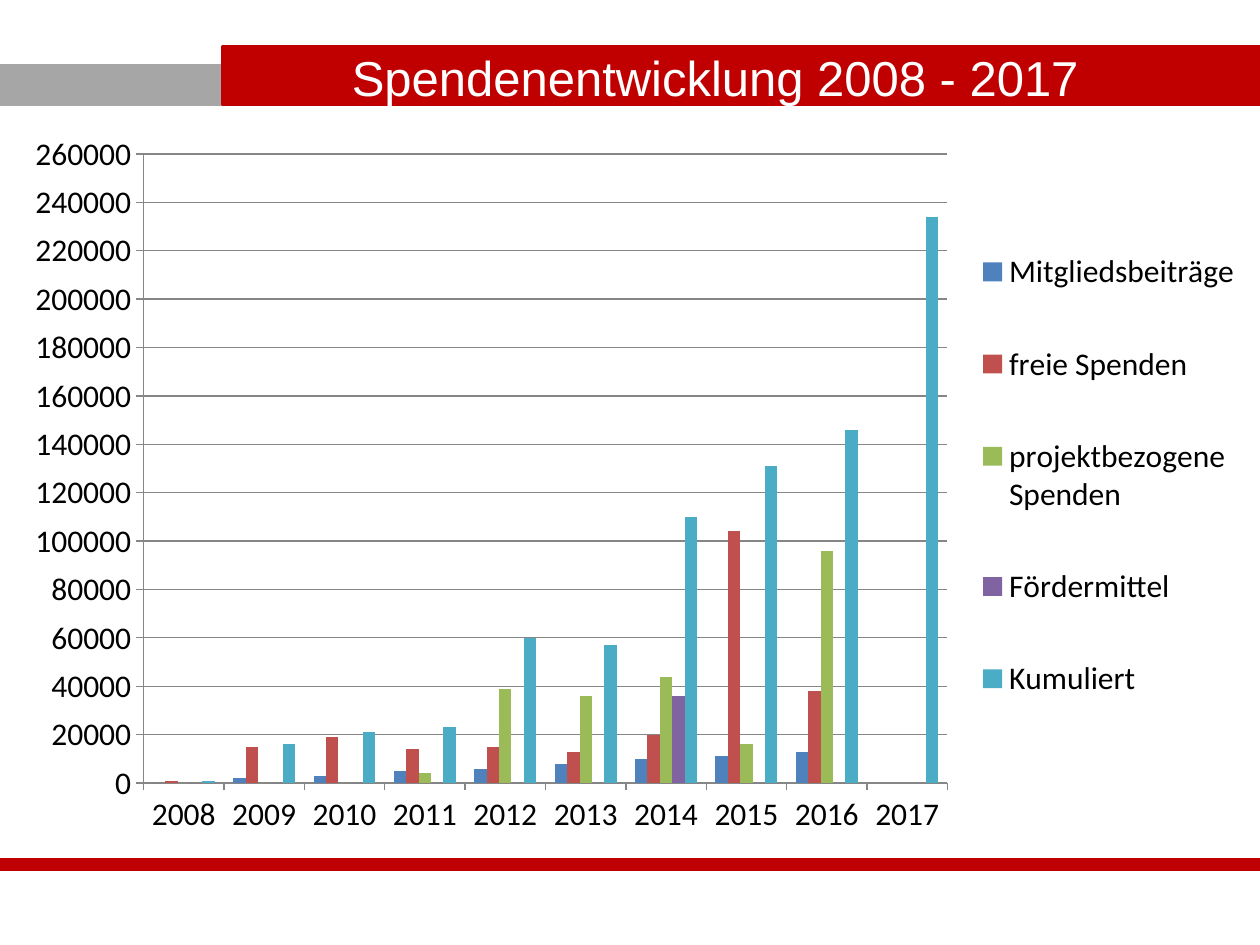
import pptx
import pptx.util
import pptx.chart.data
import pptx.dml.color
import pptx.enum.chart
import pptx.enum.shapes
import pptx.enum.text
import pptx.oxml
from pptx.util import Inches

COLORS = {"grey": "A6A6A6", "red": "C00000", "white": "FFFFFF", "black": "000000", "axis": "868686"}
TITLE = "Spendenentwicklung 2008 - 2017"
BARS = [
    ("grey", 0, 0.52, 1.77, 0.31),
    ("red", 1.77, 0.37, 8.23, 0.46),
    ("red", 0, 6.82, 10, 0.08),
]
YEARS = [str(year) for year in range(2008, 2018)]
SERIES = [
    ("Mitgliedsbeiträge", "4F81BD", [0, 2000, 3000, 5000, 6000, 8000, 10000, 11000, 13000, None]),
    ("freie Spenden", "C0504D", [1000, 15000, 19000, 14000, 15000, 13000, 20000, 104000, 38000, None]),
    ("projektbezogene Spenden", "9BBB59", [0, 0, 0, 4000, 39000, 36000, 44000, 16000, 96000, None]),
    ("Fördermittel", "8064A2", [0, 0, 0, 0, 0, 0, 36000, 0, 0, None]),
    ("Kumuliert", "4BACC6", [1000, 16000, 21000, 23000, 60000, 57000, 110000, 131000, 146000, 234000]),
]
PLOT_AREA = {"x": 0.114, "y": 0.027, "w": 0.638, "h": 0.887}
LEGEND_AREA = {"x": 0.77, "y": 0.09, "w": 0.22, "h": 0.78}


def rgb(value):
    return pptx.dml.color.RGBColor.from_string(value)


def paint(fill, value):
    fill.solid()
    fill.fore_color.rgb = rgb(value)


def style_font(font, name, size, color):
    font.name = name
    font.size = pptx.util.Pt(size)
    font.color.rgb = rgb(COLORS[color])


def add_bars(page):
    for color, *place in BARS:
        bar = page.shapes.add_shape(pptx.enum.shapes.MSO_SHAPE.RECTANGLE, *map(Inches, place))
        bar.shadow.inherit = False
        paint(bar.fill, COLORS[color])
        bar.line.color.rgb = rgb(COLORS[color])
        bar.line.width = pptx.util.Pt(2)


def add_donation_chart(page):
    data = pptx.chart.data.CategoryChartData(number_format="General")
    data.categories = YEARS
    for name, _, values in SERIES:
        data.add_series(name, values)
    chart = page.shapes.add_chart(
        pptx.enum.chart.XL_CHART_TYPE.COLUMN_CLUSTERED,
        Inches(0), Inches(1.07), Inches(10), Inches(5.63), data,
    ).chart
    style_font(chart.font, "Calibri", 18, "black")
    chart.has_title = False
    chart.has_legend = True
    chart.legend.position = pptx.enum.chart.XL_LEGEND_POSITION.RIGHT
    chart.legend.include_in_layout = False

    plot = chart.plots[0]
    plot.gap_width = 150
    plot.overlap = 0
    plot.vary_by_categories = False
    for series, (_, color, _) in zip(plot.series, SERIES):
        paint(series.format.fill, color)
        series.invert_if_negative = False

    values = chart.value_axis
    values.minimum_scale, values.maximum_scale, values.major_unit = 0, 260000, 20000
    values.has_major_gridlines = True
    for axis in (chart.category_axis, values):
        axis.major_tick_mark = pptx.enum.chart.XL_TICK_MARK.OUTSIDE
        axis.minor_tick_mark = pptx.enum.chart.XL_TICK_MARK.NONE
    for part in (chart.category_axis, values, values.major_gridlines):
        part.format.line.color.rgb = rgb(COLORS["axis"])
        part.format.line.width = pptx.util.Pt(0.75)
    set_layout(plot._element.getparent(), 0, PLOT_AREA, '<c:layoutTarget val="inner"/>')
    set_layout(chart.legend._element, 1, LEGEND_AREA)


def set_layout(element, position, area, target=""):
    modes = '<c:xMode val="edge"/><c:yMode val="edge"/>'
    sizes = "".join(f'<c:{key} val="{value}"/>' for key, value in area.items())
    layout = pptx.oxml.parse_xml(
        '<c:layout xmlns:c="http://schemas.openxmlformats.org/drawingml/2006/chart">'
        f"<c:manualLayout>{target}{modes}{sizes}</c:manualLayout></c:layout>"
    )
    for old in element.findall(layout.tag):
        element.remove(old)
    element.insert(position, layout)


def place_title(page):
    title = page.shapes.title
    title.left, title.top, title.width, title.height = map(Inches, (1.85, 0.32, 7.65, 0.47))
    frame = title.text_frame
    frame.text = TITLE
    frame.auto_size = pptx.enum.text.MSO_AUTO_SIZE.NONE
    frame.vertical_anchor = pptx.enum.text.MSO_ANCHOR.TOP
    frame.margin_top, frame.margin_bottom = Inches(0.06), Inches(0)
    para = frame.paragraphs[0]
    para.alignment = pptx.enum.text.PP_ALIGN.CENTER
    style_font(para.font, "Arial", 28, "white")
    page.shapes._spTree.append(title._element)


def main():
    deck = pptx.Presentation()
    deck.slide_width, deck.slide_height = Inches(10), Inches(7.5)
    page = deck.slides.add_slide(deck.slide_layouts[5])
    paint(page.background.fill, COLORS["white"])
    add_bars(page)
    add_donation_chart(page)
    place_title(page)
    deck.save("out.pptx")


if __name__ == "__main__":
    main()
